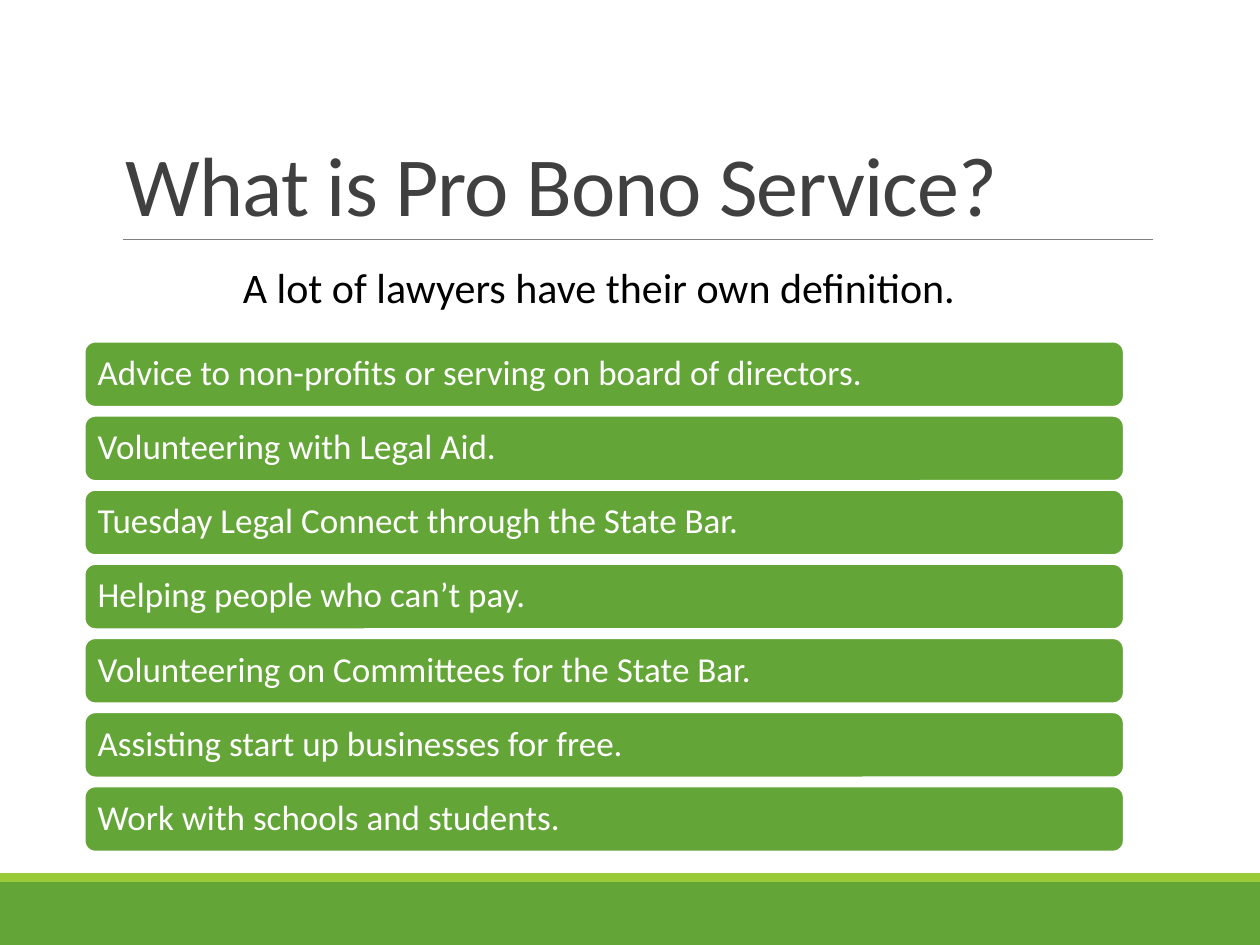
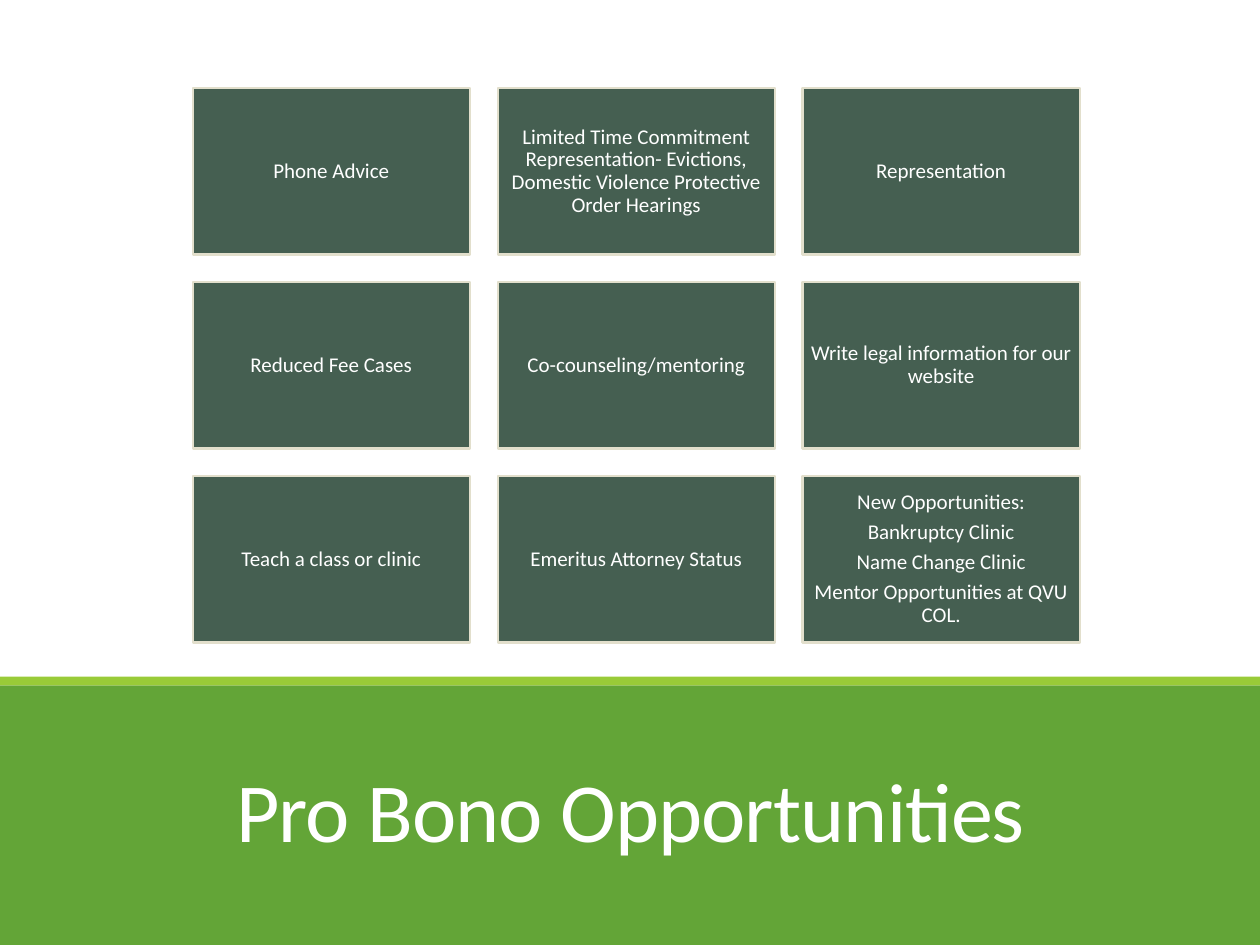
from lxml.etree import SubElement
from pptx import Presentation
from pptx.dml.color import RGBColor
from pptx.enum.shapes import MSO_CONNECTOR as Connector, MSO_SHAPE as Shape
from pptx.enum.text import MSO_ANCHOR as Anchor, PP_ALIGN as Align
from pptx.oxml.ns import qn
from pptx.util import Inches, Pt

SLIDE_WIDTH, SLIDE_HEIGHT = 10, 7.5
STRIPE_HEIGHT = 0.07
COLORS = {
    "green": "63A537",
    "lime": "99CB38",
    "forest": "455F51",
    "sand": "E2DFCC",
    "white": "FFFFFF",
    "black": "000000",
    "title": "404040",
    "rule": "808080",
}
DEFINITIONS = [
    "Advice to non-profits or serving on board of directors.",
    "Volunteering with Legal Aid.",
    "Tuesday Legal Connect through the State Bar.",
    "Helping people who can’t pay.",
    "Volunteering on Committees for the State Bar.",
    "Assisting start up businesses for free.",
    "Work with schools and students.",
]
OPPORTUNITIES = [
    ["Phone Advice"],
    ["Limited Time Commitment Representation- Evictions, "
     "Domestic Violence Protective Order Hearings"],
    ["Representation"],
    ["Reduced Fee Cases"],
    ["Co-counseling/mentoring"],
    ["Write legal information for our website"],
    ["Teach a class or clinic"],
    ["Emeritus Attorney Status"],
    ["New Opportunities:", "Bankruptcy Clinic", "Name Change Clinic",
     "Mentor Opportunities at QVU COL."],
]


def color(name):
    return RGBColor.from_string(COLORS[name])


def apply(target, values):
    for attribute, value in values.items():
        setattr(target, attribute, value)


def write(frame, lines, size, ink, anchor=Anchor.TOP, inset=None, tracking=None, **layout):
    apply(frame, {"word_wrap": True, "vertical_anchor": anchor})
    if inset is not None:
        sides = ("left", "top", "right", "bottom")
        apply(frame, {f"margin_{side}": Inches(inset) for side in sides})
    for index, line in enumerate(lines):
        paragraph = frame.add_paragraph() if index else frame.paragraphs[0]
        apply(paragraph, layout)
        run = paragraph.add_run()
        run.text = line
        apply(run.font, {"name": "Calibri", "size": Pt(size)})
        run.font.color.rgb = color(ink)
        if tracking is not None:
            run.font._element.set("spc", str(tracking))


def add_block(slide, kind, box, fill, outline=None):
    block = slide.shapes.add_shape(kind, *map(Inches, box))
    block.shadow.inherit = False
    block.fill.solid()
    block.fill.fore_color.rgb = color(fill)
    if outline:
        block.line.color.rgb = color(outline)
        block.line.width = Pt(1.25)
    else:
        block.line.fill.background()
    return block


def add_panel(slide, kind, box, fill, outline, lines, size, inset, align):
    panel = add_block(slide, kind, box, fill, outline)
    write(panel.text_frame, lines, size, "white", Anchor.MIDDLE, inset,
          alignment=align, line_spacing=0.9, space_after=Pt(size * 0.35))


def add_text(slide, box, lines, size, ink, **style):
    frame = slide.shapes.add_textbox(*map(Inches, box)).text_frame
    write(frame, lines, size, ink, **style)


def add_title(slide, box, title, ink, align=Align.LEFT):
    add_text(slide, box, [title], 48, ink, anchor=Anchor.BOTTOM,
             tracking=-50, alignment=align, line_spacing=0.85)


def add_footer(slide, top):
    base_top = top + STRIPE_HEIGHT
    add_block(slide, Shape.RECTANGLE,
              (0, base_top, SLIDE_WIDTH, SLIDE_HEIGHT - base_top), "green")
    add_block(slide, Shape.RECTANGLE, (0, top, SLIDE_WIDTH, STRIPE_HEIGHT), "lime")


def add_rule(slide, left, right, y):
    rule = slide.shapes.add_connector(
        Connector.STRAIGHT, *map(Inches, (left, y, right, y)))
    rule.line.color.rgb = color("rule")
    rule.line.width = Pt(0.5)
    SubElement(rule._element.spPr, qn("a:effectLst"))


def build_definitions(slide):
    add_footer(slide, 6.93)
    add_rule(slide, 0.98, 9.15, 1.9)
    add_title(slide, (0.9, 0.31, 8.25, 1.59), "What is Pro Bono Service?", "title")
    first_top, last_top = 2.71, 6.24
    step = (last_top - first_top) / (len(DEFINITIONS) - 1)
    for index, definition in enumerate(DEFINITIONS):
        add_panel(slide, Shape.ROUNDED_RECTANGLE,
                  (0.67, first_top + index * step, 8.25, 0.52),
                  "green", "white", [definition], 20, 0.08, Align.LEFT)
    add_text(slide, (1.83, 2.03, 6.33, 0.91),
             ["A lot of lawyers have their own definition."], 24, "black")


def build_opportunities(slide):
    add_footer(slide, 5.37)
    add_title(slide, (0.88, 5.74, 8.25, 1.13), "Pro Bono Opportunities",
              "white", Align.CENTER)
    width, height, gap = 2.2, 1.32, 0.22
    for index, lines in enumerate(OPPORTUNITIES):
        row, column = divmod(index, 3)
        left = 1.53 + column * (width + gap)
        top = 0.7 + row * (height + gap)
        add_panel(slide, Shape.RECTANGLE, (left, top, width, height),
                  "forest", "sand", lines, 12, 0.05, Align.CENTER)


def main():
    deck = Presentation()
    apply(deck, {"slide_width": Inches(SLIDE_WIDTH), "slide_height": Inches(SLIDE_HEIGHT)})
    blank = deck.slide_layouts[6]
    for build in (build_definitions, build_opportunities):
        build(deck.slides.add_slide(blank))
    deck.save("out.pptx")


if __name__ == "__main__":
    main()
